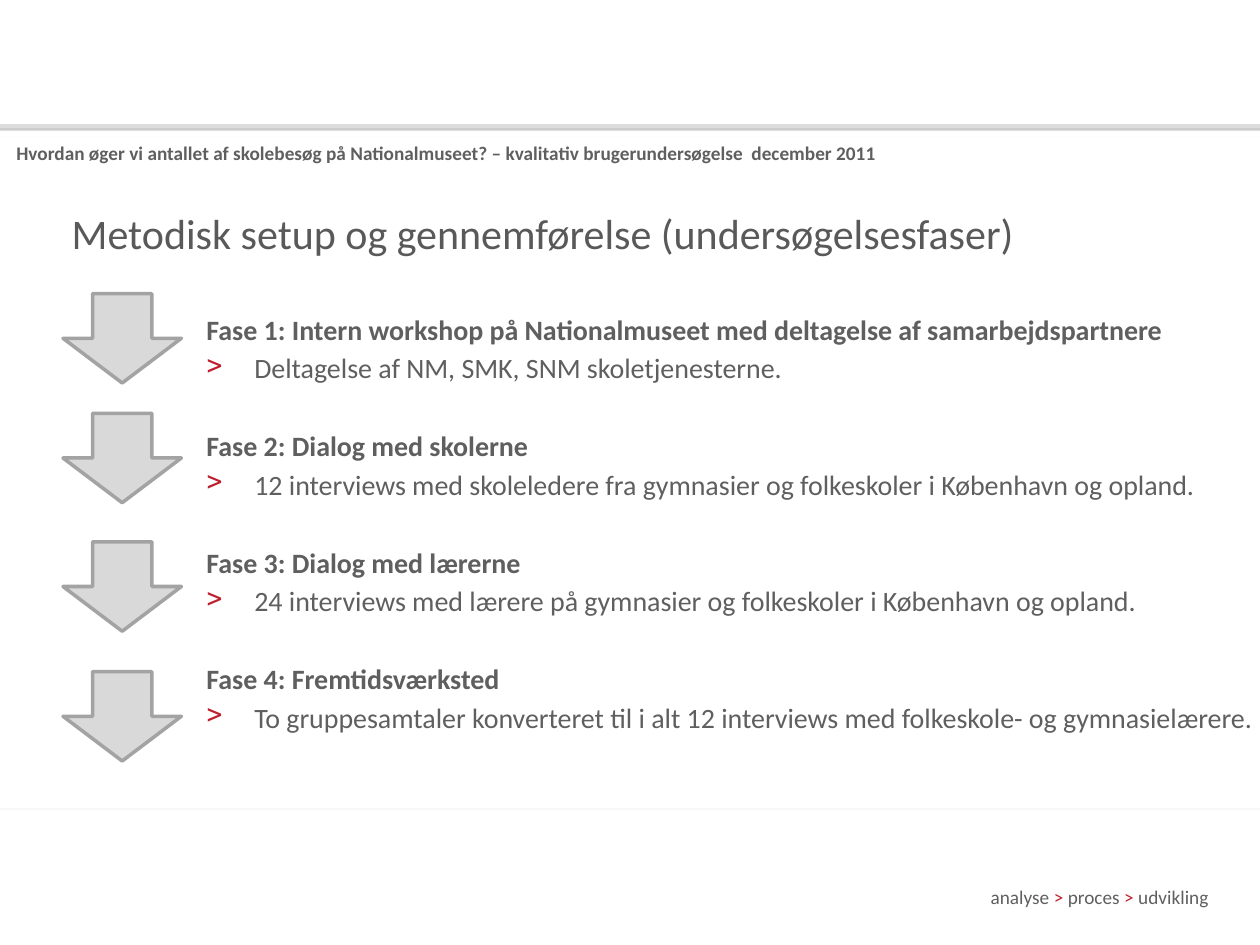
from lxml.etree import SubElement
from pptx import Presentation
from pptx.dml.color import RGBColor
from pptx.enum.shapes import MSO_CONNECTOR, MSO_SHAPE
from pptx.enum.text import MSO_ANCHOR, PP_ALIGN
from pptx.oxml.ns import qn
from pptx.util import Inches, Pt

COLORS = {
    "text": "5F5F5F",
    "title": "595959",
    "accent": "BF1E2D",
    "white": "FFFFFF",
    "faint": "F8F8F8",
    "rule": "DDDDDD",
    "shadow": "808080",
    "arrow": "D9D9D9",
    "arrow_edge": "A3A3A3",
}

HEADER = ("Hvordan øger vi antallet af skolebesøg på Nationalmuseet? "
          "– kvalitativ brugerundersøgelse  december 2011")
TITLE = "Metodisk setup og gennemførelse (undersøgelsesfaser)"
# arrow top, heading, detail
PHASES = [
    (2.33, "Fase 1: Intern workshop på Nationalmuseet med deltagelse af samarbejdspartnere",
     "Deltagelse af NM, SMK, SNM skoletjenesterne."),
    (3.28, "Fase 2: Dialog med skolerne",
     "12 interviews med skoleledere fra gymnasier og folkeskoler i København og opland."),
    (4.3, "Fase 3: Dialog med lærerne",
     "24 interviews med lærere på gymnasier og folkeskoler i København og opland."),
    (5.33, "Fase 4: Fremtidsværksted",
     "To gruppesamtaler konverteret til i alt 12 interviews med folkeskole- og gymnasielærere."),
]


def rgb(name):
    return RGBColor.from_string(COLORS[name])


def add_color(parent, name, alpha=None):
    color = SubElement(parent, qn("a:srgbClr"), val=COLORS[name])
    if alpha is not None:
        SubElement(color, qn("a:alpha"), val=str(alpha * 1000))


def write(paragraph, text, size=16, color="text", bold=False):
    run = paragraph.add_run()
    run.text = text
    run.font.name = "Calibri"
    run.font.size = Pt(size)
    run.font.bold = bold
    run.font.color.rgb = rgb(color)


def add_bullet(paragraph):
    properties = paragraph._p.get_or_add_pPr()
    indent = Inches(0.38)
    properties.set("marL", str(indent))
    properties.set("indent", str(-indent))
    add_color(SubElement(properties, qn("a:buClr")), "accent")
    SubElement(properties, qn("a:buChar"), char=">")


class SlideBuilder:
    def __init__(self, slide):
        self.shapes = slide.shapes

    def rule(self, y, color, width, shadow=False):
        line = self.shapes.add_connector(
            MSO_CONNECTOR.STRAIGHT, Inches(0), Inches(y), Inches(10), Inches(y))
        line.line.color.rgb = rgb(color)
        line.line.width = Pt(width)
        effects = SubElement(line._element.spPr, qn("a:effectLst"))
        if shadow:
            outer = SubElement(effects, qn("a:outerShdw"),
                               dist=str(Pt(1.6)), dir=str(90 * 60000))
            add_color(outer, "shadow", alpha=38)

    def shape(self, kind, box, fill, edge=None):
        shape = self.shapes.add_shape(kind, *map(Inches, box))
        shape.shadow.inherit = False
        shape.fill.solid()
        shape.fill.fore_color.rgb = rgb(fill)
        if edge:
            shape.line.color.rgb = rgb(edge)
            shape.line.width = Pt(2)
        else:
            shape.line.fill.background()
        return shape

    def header_band(self, text):
        band = self.shape(MSO_SHAPE.RECTANGLE, (0, 0.92, 10, 0.58), "white")
        color = band.fill._xPr.find(qn("a:solidFill")).find(qn("a:srgbClr"))
        SubElement(color, qn("a:alpha"), val="75000")
        frame = band.text_frame
        frame.margin_left = Inches(0.13)
        frame.vertical_anchor = MSO_ANCHOR.MIDDLE
        frame.paragraphs[0].alignment = PP_ALIGN.LEFT
        write(frame.paragraphs[0], text, size=11, bold=True)

    def text_box(self, box, anchor=MSO_ANCHOR.TOP):
        frame = self.shapes.add_textbox(*map(Inches, box)).text_frame
        frame.word_wrap = True
        frame.vertical_anchor = anchor
        return frame

    def phase_list(self, box, phases):
        frame = self.text_box(box)
        frame.margin_right = 0
        for index, (_, title, detail) in enumerate(phases):
            heading = frame.add_paragraph() if index else frame.paragraphs[0]
            if index:
                heading.space_before = Pt(25.3)
            write(heading, title, bold=True)
            item = frame.add_paragraph()
            item.space_before = Pt(2.9)
            add_bullet(item)
            write(item, detail)


def main():
    presentation = Presentation()
    presentation.slide_width = Inches(10)
    presentation.slide_height = Inches(7.5)
    builder = SlideBuilder(
        presentation.slides.add_slide(presentation.slide_layouts[6]))

    builder.rule(6.42, "faint", 1)
    builder.rule(1.09, "faint", 1)
    builder.header_band(HEADER)
    builder.rule(1, "rule", 2, shadow=True)

    footer = builder.text_box((6.25, 6.98, 3.44, 0.29)).paragraphs[0]
    footer.alignment = PP_ALIGN.RIGHT
    for text, color in [("analyse ", "text"), (">", "accent"), (" proces ", "text"),
                        (">", "accent"), (" udvikling", "text")]:
        write(footer, text, size=11, color=color)

    builder.phase_list((1.54, 2.43, 8.46, 3.9), PHASES)
    title = builder.text_box((0.47, 1.56, 8.69, 0.58), MSO_ANCHOR.MIDDLE)
    write(title.paragraphs[0], TITLE, size=24, color="title")
    for top, _, _ in PHASES:
        builder.shape(MSO_SHAPE.DOWN_ARROW, (0.5, top, 0.94, 0.71),
                      "arrow", "arrow_edge")

    presentation.save("out.pptx")


if __name__ == "__main__":
    main()
